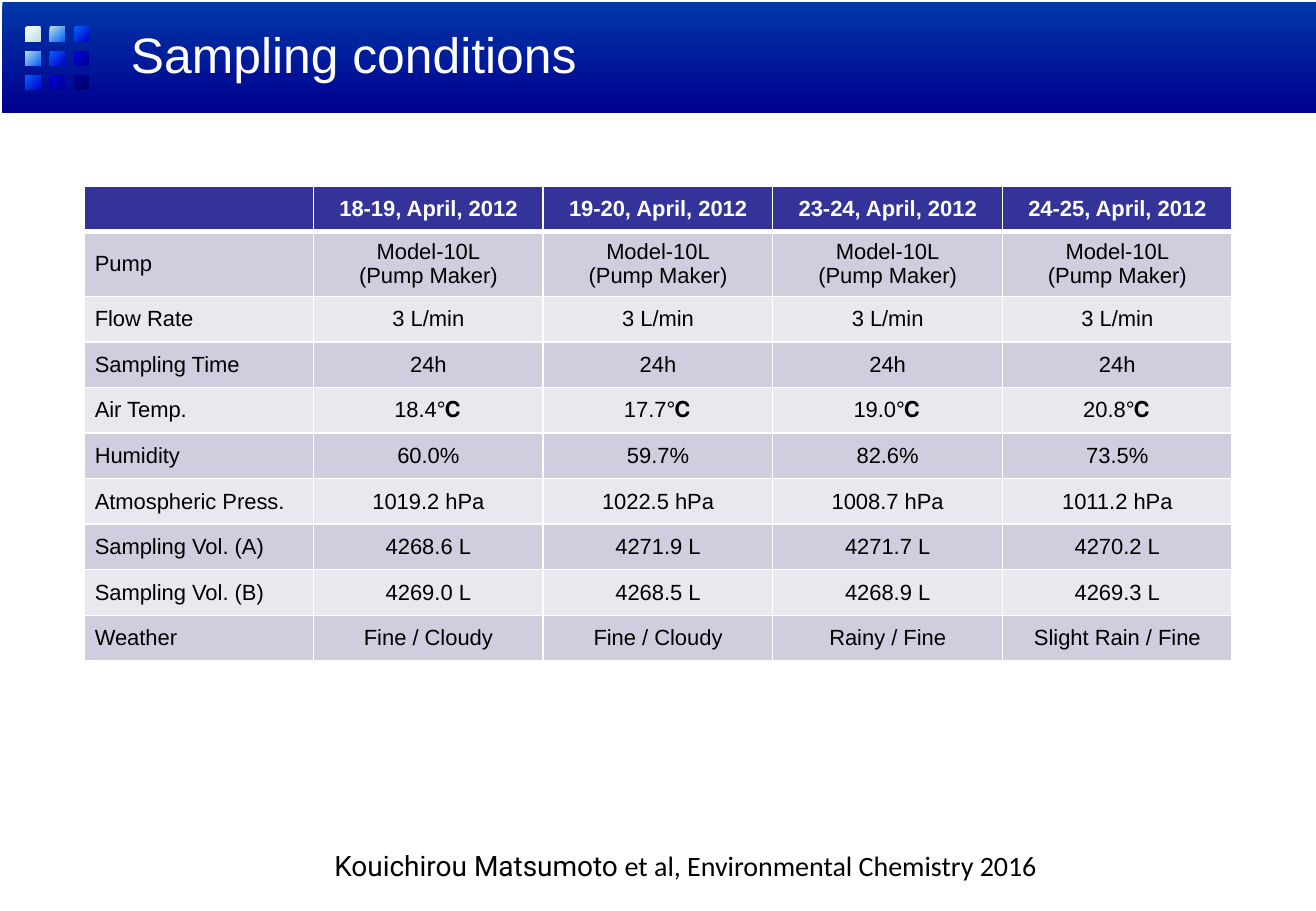
from lxml import etree
from pptx import Presentation
from pptx.dml.color import RGBColor
from pptx.enum import shapes, text
from pptx.oxml import ns
from pptx.util import Inches, Pt

# Content
TITLE = "Sampling conditions"
DATES = ["", "18-19, April, 2012", "19-20, April, 2012", "23-24, April, 2012", "24-25, April, 2012"]
CONDITIONS = [
    ["Pump"] + ["Model-10L\n(Pump Maker)"] * 4,
    ["Flow Rate"] + ["3 L/min"] * 4,
    ["Sampling Time"] + ["24h"] * 4,
    ["Air Temp.", "18.4℃", "17.7℃", "19.0℃", "20.8℃"],
    ["Humidity", "60.0%", "59.7%", "82.6%", "73.5%"],
    ["Atmospheric Press.", "1019.2 hPa", "1022.5 hPa", "1008.7 hPa", "1011.2 hPa"],
    ["Sampling Vol. (A)", "4268.6 L", "4271.9 L", "4271.7 L", "4270.2 L"],
    ["Sampling Vol. (B)", "4269.0 L", "4268.5 L", "4268.9 L", "4269.3 L"],
    ["Weather", "Fine / Cloudy", "Fine / Cloudy", "Rainy / Fine", "Slight Rain / Fine"],
]
CITATION = [("Kouichirou Matsumoto ", {"font": "Roboto"}),
            ("et al, Environmental Chemistry 2016", {"font": "Calibri"})]

# Colours
WHITE = RGBColor(0xFF, 0xFF, 0xFF)
BLACK = RGBColor(0x00, 0x00, 0x00)
HEADER = RGBColor(0x33, 0x33, 0x99)
BANDS = [RGBColor(0xCE, 0xCE, 0xDE), RGBColor(0xE8, 0xE8, 0xEF)]
BANNER = (RGBColor(0x00, 0x38, 0xA8), RGBColor(0x00, 0x00, 0x8E))
PALE = RGBColor(0xBB, 0xE0, 0xE3)
BRIGHT = RGBColor(0x00, 0x66, 0xFF)
NAVY = RGBColor(0x00, 0x00, 0x99)
MOSAIC = [  # one gradient per diagonal, from top left to bottom right
    (WHITE, PALE),
    (PALE, BRIGHT),
    (BRIGHT, RGBColor(0x00, 0x00, 0xCC)),
    (RGBColor(0x00, 0x00, 0xD6), NAVY),
    (NAVY, RGBColor(0x00, 0x00, 0x66)),
]

# Layout in inches
TABLE_BOX = (0.69, 1.53, 9.45, 3.9)
PUMP_HEIGHT = 0.52
TILE, TILE_STEP, TILE_LEFT, TILE_TOP = 0.12, 0.2, 0.21, 0.22

LEFT, CENTER = text.PP_ALIGN.LEFT, text.PP_ALIGN.CENTER


def write(frame, paragraphs, *, size, color=BLACK, font="Arial", bold=False,
          align=LEFT, anchor=text.MSO_ANCHOR.MIDDLE):
    """Fill a text frame; each paragraph is a list of (text, overrides)."""
    frame.word_wrap = True
    frame.vertical_anchor = anchor
    for i, runs in enumerate(paragraphs):
        paragraph = frame.paragraphs[0] if i == 0 else frame.add_paragraph()
        paragraph.alignment = align
        for words, overrides in runs:
            run = paragraph.add_run()
            run.text = words
            run.font.name = overrides.get("font", font)
            run.font.bold = overrides.get("bold", bold)
            run.font.size = Pt(size)
            run.font.color.rgb = color


def add_gradient_box(slide, box, colors, angle):
    shape = slide.shapes.add_shape(shapes.MSO_SHAPE.RECTANGLE, *map(Inches, box))
    shape.shadow.inherit = False
    shape.line.fill.background()
    shape.fill.gradient()
    shape.fill.gradient_angle = 360 - angle
    for stop, color in zip(shape.fill.gradient_stops, colors):
        stop.color.rgb = color


def set_borders(cell, widths):
    properties = cell._tc.get_or_add_tcPr()
    for side, width in zip(("lnL", "lnR", "lnT", "lnB"), widths):
        line = etree.SubElement(properties, ns.qn("a:" + side), w=str(Pt(width)))
        fill = etree.SubElement(line, ns.qn("a:solidFill"))
        etree.SubElement(fill, ns.qn("a:srgbClr"), val=str(WHITE))


def cell_paragraphs(value):
    """One paragraph per line, with the degree sign in bold."""
    paragraphs = []
    for line in value.split("\n"):
        number, degree, _ = line.partition("℃")
        paragraphs.append([(number, {})] + ([(degree, {"bold": True})] if degree else []))
    return paragraphs


def add_conditions(slide):
    rows = [DATES] + CONDITIONS
    table = slide.shapes.add_table(len(rows), len(DATES), *map(Inches, TABLE_BOX)).table
    for column in table.columns:
        column.width = Inches(TABLE_BOX[2] / len(DATES))
    plain_height = (TABLE_BOX[3] - PUMP_HEIGHT) / (len(rows) - 1)
    for r, values in enumerate(rows):
        table.rows[r].height = Inches(PUMP_HEIGHT if values[0] == "Pump" else plain_height)
        header = r == 0
        for c, value in enumerate(values):
            cell = table.cell(r, c)
            set_borders(cell, (1, 1, 3 if r == 1 else 1, 3 if header else 1))
            cell.fill.solid()
            cell.fill.fore_color.rgb = HEADER if header else BANDS[(r - 1) % 2]
            cell.margin_left = cell.margin_right = Inches(0.09)
            cell.margin_top = cell.margin_bottom = Inches(0.05)
            cell.vertical_anchor = text.MSO_ANCHOR.MIDDLE
            if value:
                write(cell.text_frame, cell_paragraphs(value), size=13, bold=header,
                      color=WHITE if header else BLACK, align=CENTER if c else LEFT)
            else:  # keep the empty corner from stretching its row
                ending = cell.text_frame.paragraphs[0]._p.get_or_add_endParaRPr()
                ending.set("sz", "1300")


def main():
    deck = Presentation()
    deck.slide_width, deck.slide_height = Inches(10.83), Inches(7.5)
    slide = deck.slides.add_slide(deck.slide_layouts[6])

    # Banner with its mosaic of tiles
    add_gradient_box(slide, (0.02, 0.02, 10.83, 0.91), BANNER, 90)
    for row in range(3):
        for col in range(3):
            tile = (TILE_LEFT + col * TILE_STEP, TILE_TOP + row * TILE_STEP, TILE, TILE)
            add_gradient_box(slide, tile, MOSAIC[row + col], 45)

    # Title, table and citation
    title = slide.shapes.add_textbox(*map(Inches, (0.98, 0.13, 9.56, 0.63)))
    write(title.text_frame, [[(TITLE, {})]], size=29.5, color=WHITE)
    add_conditions(slide)
    citation = slide.shapes.add_textbox(*map(Inches, (2.15, 6.94, 6.98, 0.38)))
    write(citation.text_frame, [CITATION], size=16.6, align=CENTER, anchor=text.MSO_ANCHOR.TOP)

    deck.save("out.pptx")


if __name__ == "__main__":
    main()
